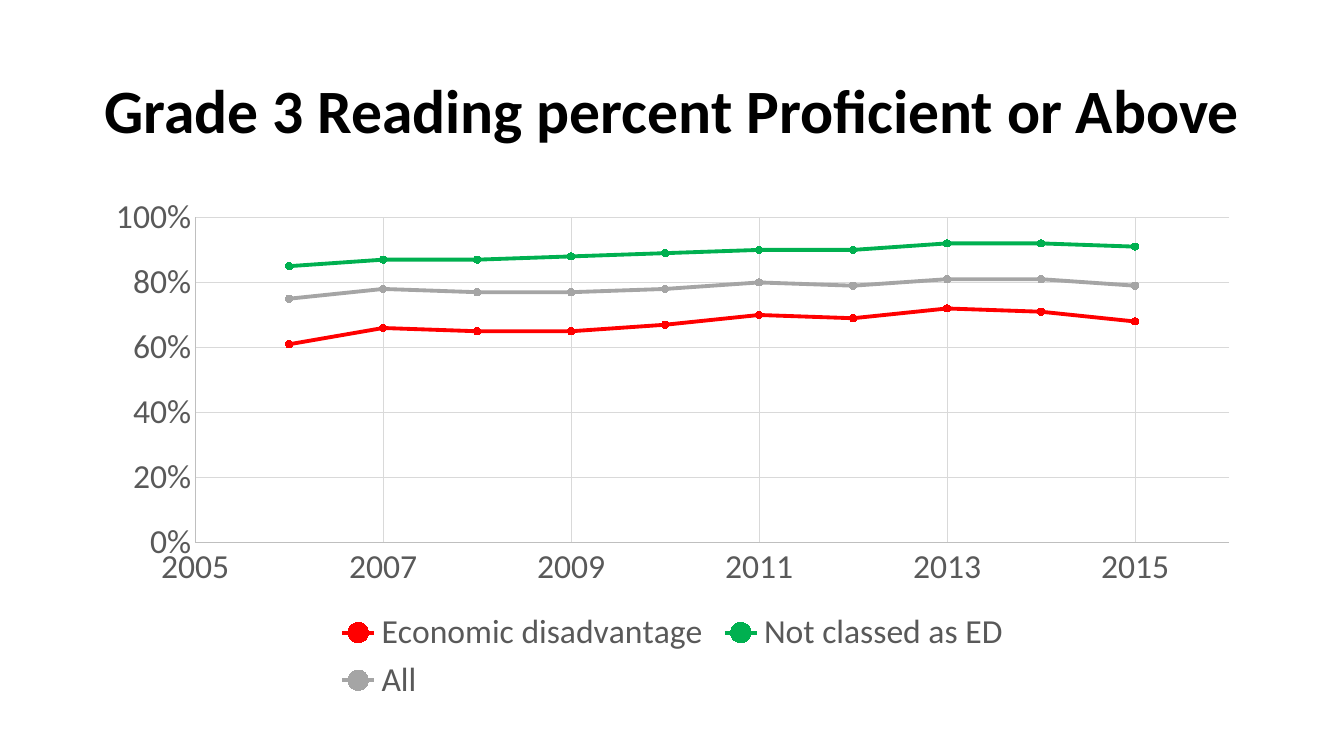
"""Build the slide on Grade 3 reading proficiency from 2006 to 2015."""
from dataclasses import dataclass

from pptx import Presentation
from pptx import util as u
from pptx.chart import data as chart_data
from pptx.dml.color import RGBColor
from pptx.enum import chart as chart_enum
from pptx.enum import text

FONT = "Calibri"
LEFT, WIDTH = 0.92, 11.5
FIRST_YEAR = 2006
GRAY_TEXT, GRID, AXIS = "595959", "D9D9D9", "BFBFBF"


@dataclass(frozen=True)
class Group:
    name: str
    color: str
    shares: tuple[float, ...]


GROUPS = (
    Group("Economic disadvantage", "FF0000",
          (0.61, 0.66, 0.65, 0.65, 0.67, 0.70, 0.69, 0.72, 0.71, 0.68)),
    Group("Not classed as ED", "00B050",
          (0.85, 0.87, 0.87, 0.88, 0.89, 0.90, 0.90, 0.92, 0.92, 0.91)),
    Group("All", "A5A5A5",
          (0.75, 0.78, 0.77, 0.77, 0.78, 0.80, 0.79, 0.81, 0.81, 0.79)),
)


def rgb(color: str) -> RGBColor:
    return RGBColor.from_string(color)


def style_font(font, size: float, color: str, bold: bool = False) -> None:
    font.name, font.size, font.bold = FONT, u.Pt(size), bold
    font.color.rgb = rgb(color)


def style_line(line, color: str, width: float) -> None:
    line.color.rgb = rgb(color)
    line.width = u.Pt(width)


def add_text(slide, content: str, *, top: float, height: float, size: float,
             color: str = "000000", bold: bool = False) -> None:
    frame = slide.shapes.add_textbox(
        u.Inches(LEFT), u.Inches(top), u.Inches(WIDTH), u.Inches(height)).text_frame
    frame.word_wrap = True
    frame.vertical_anchor = text.MSO_ANCHOR.MIDDLE
    paragraph = frame.paragraphs[0]
    paragraph.alignment = text.PP_ALIGN.CENTER
    paragraph.line_spacing = 0.9
    run = paragraph.add_run()
    run.text = content
    style_font(run.font, size, color, bold)


def style_axis(axis, low: float, high: float, step: float, number_format: str) -> None:
    axis.minimum_scale, axis.maximum_scale, axis.major_unit = low, high, step
    axis.major_tick_mark = axis.minor_tick_mark = chart_enum.XL_TICK_MARK.NONE
    axis.has_major_gridlines = True
    style_line(axis.major_gridlines.format.line, GRID, 0.75)
    style_line(axis.format.line, AXIS, 0.75)
    labels = axis.tick_labels
    labels.number_format, labels.number_format_is_linked = number_format, False
    style_font(labels.font, 24, GRAY_TEXT)


def style_series(series, color: str) -> None:
    series.smooth = False
    style_line(series.format.line, color, 2.75)
    marker = series.marker
    marker.style, marker.size = chart_enum.XL_MARKER_STYLE.CIRCLE, 5
    marker.format.fill.solid()
    marker.format.fill.fore_color.rgb = rgb(color)
    style_line(marker.format.line, color, 0.75)


def add_proficiency_chart(slide) -> None:
    proficiency = chart_data.XyChartData(number_format="0%")
    for group in GROUPS:
        points = proficiency.add_series(group.name)
        for year, share in enumerate(group.shares, FIRST_YEAR):
            points.add_data_point(year, share)
    chart = slide.shapes.add_chart(
        chart_enum.XL_CHART_TYPE.XY_SCATTER_LINES, u.Inches(LEFT), u.Inches(1.85),
        u.Inches(WIDTH), u.Inches(5.17), proficiency).chart
    style_font(chart.font, 24, "000000")
    chart.has_title = False
    chart.plots[0].vary_by_categories = False
    style_axis(chart.category_axis, 2005, 2016, 2, "General")
    style_axis(chart.value_axis, 0, 1, 0.2, "0%")
    chart.has_legend = True
    chart.legend.position = chart_enum.XL_LEGEND_POSITION.BOTTOM
    chart.legend.include_in_layout = False
    style_font(chart.legend.font, 24, GRAY_TEXT)
    for series, group in zip(chart.plots[0].series, GROUPS):
        style_series(series, group.color)


def main() -> None:
    deck = Presentation()
    deck.slide_width, deck.slide_height = u.Inches(13.33), u.Inches(7.5)
    slide = deck.slides.add_slide(deck.slide_layouts[6])
    add_text(slide, "Grade 3 Reading percent Proficient or Above",
             top=0.4, height=1.45, size=44, bold=True)
    add_proficiency_chart(slide)
    deck.save("out.pptx")


if __name__ == "__main__":
    main()
